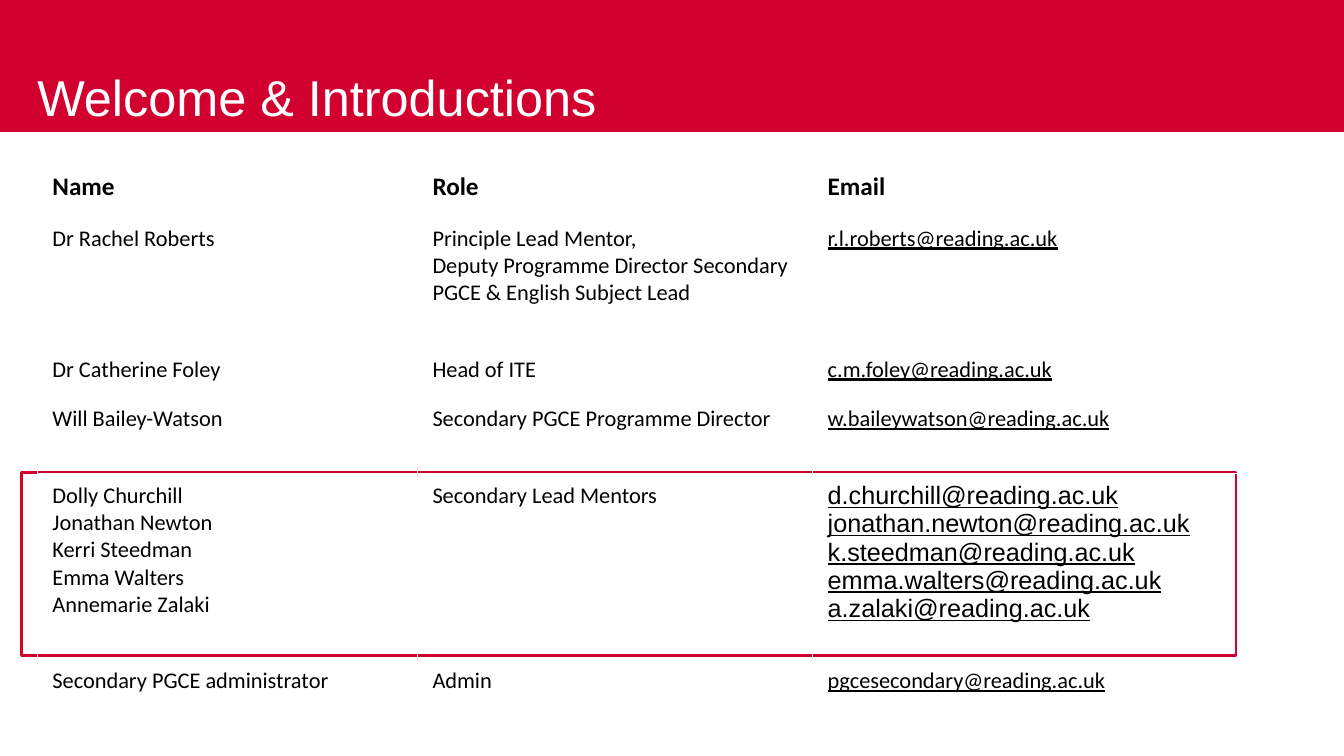
from dataclasses import dataclass

from lxml.etree import SubElement
from pptx import Presentation
from pptx.dml.color import RGBColor
from pptx.enum.shapes import MSO_SHAPE
from pptx.enum.text import MSO_ANCHOR, MSO_AUTO_SIZE, PP_ALIGN
from pptx.oxml.ns import qn
from pptx.util import Emu, Pt


@dataclass(frozen=True)
class Theme:
    red: str = "D2002E"
    white: str = "FFFFFF"
    black: str = "000000"
    heading_font: str = "Arial"
    body_font: str = "Calibri"
    title_size: int = 36
    large_size: int = 18
    body_size: int = 16
    frame_width: float = 2
    grid_width: float = 0.75


@dataclass(frozen=True)
class Panel:
    x: int
    y: int
    w: int
    h: int
    fill: str
    line: str = ""


@dataclass(frozen=True)
class Style:
    font: str
    size: int
    bold: bool = False


@dataclass(frozen=True)
class Contact:
    height: int
    names: tuple[str, ...]
    roles: tuple[str, ...]
    emails: tuple[str, ...]
    text_style: Style
    email_style: Style


THEME = Theme()
PX = 9144  # EMU in one px, 100 px to the inch
SLIDE_W, SLIDE_H = 1333, 750
BAND_H = 131
COLUMNS = (377, 392, 528)
TABLE_X, TABLE_Y = 37, 162
CELL_PAD_X, CELL_PAD_Y = 15, 8

HEADER = Style(THEME.body_font, THEME.large_size, True)
BODY = Style(THEME.body_font, THEME.body_size)
LARGE = Style(THEME.heading_font, THEME.large_size)

PANELS = (
    Panel(0, 0, SLIDE_W, SLIDE_H, THEME.red),
    Panel(0, BAND_H, SLIDE_W, SLIDE_H - BAND_H, THEME.white),
    Panel(21, 469, 1205, 181, THEME.white, THEME.red),
)

CONTACTS = (
    Contact(53, ("Name",), ("Role",), ("Email",), HEADER, HEADER),
    Contact(130, ("Dr Rachel Roberts",),
            ("Principle Lead Mentor,",
             "Deputy Programme Director Secondary PGCE & English Subject Lead"),
            ("r.l.roberts@reading.ac.uk",), BODY, BODY),
    Contact(49, ("Dr Catherine Foley",), ("Head of ITE",),
            ("c.m.foley@reading.ac.uk",), BODY, BODY),
    Contact(76, ("Will Bailey-Watson",), ("Secondary PGCE Programme Director",),
            ("w.baileywatson@reading.ac.uk",), BODY, BODY),
    Contact(184,
            ("Dolly Churchill", "Jonathan Newton", "Kerri Steedman",
             "Emma Walters", "Annemarie Zalaki"),
            ("Secondary Lead Mentors",),
            ("d.churchill@reading.ac.uk", "jonathan.newton@reading.ac.uk",
             "k.steedman@reading.ac.uk", "emma.walters@reading.ac.uk",
             "a.zalaki@reading.ac.uk"), BODY, LARGE),
    Contact(76, ("Secondary PGCE administrator",), ("Admin",),
            ("pgcesecondary@reading.ac.uk",), BODY, BODY),
)


def px(n: int) -> Emu:
    return Emu(n * PX)


def add_run(p, text: str, style: Style, color: str) -> None:
    r = p.add_run()
    r.text = text
    r.font.name, r.font.size, r.font.bold = style.font, Pt(style.size), style.bold
    r.font.underline = "@" in text
    r.font.color.rgb = RGBColor.from_string(color)


def add_panel(s, panel: Panel) -> None:
    sp = s.shapes.add_shape(MSO_SHAPE.RECTANGLE, px(panel.x), px(panel.y),
                            px(panel.w), px(panel.h))
    sp.shadow.inherit = False
    sp.fill.solid()
    sp.fill.fore_color.rgb = RGBColor.from_string(panel.fill)
    if panel.line:
        sp.line.color.rgb = RGBColor.from_string(panel.line)
        sp.line.width = Pt(THEME.frame_width)
    else:
        sp.line.fill.background()


def set_title(s, text: str) -> None:
    sp = s.shapes.title
    sp.left, sp.top, sp.width, sp.height = px(37), px(21), px(1249), px(104)
    tf = sp.text_frame
    tf.margin_left = tf.margin_right = tf.margin_top = tf.margin_bottom = 0
    tf.vertical_anchor = MSO_ANCHOR.BOTTOM
    tf.auto_size = MSO_AUTO_SIZE.NONE
    p = tf.paragraphs[0]
    p.alignment = PP_ALIGN.LEFT
    p.line_spacing = 0.8
    add_run(p, text, Style(THEME.heading_font, THEME.title_size), THEME.white)


def set_borders(cell) -> None:
    props = cell._tc.get_or_add_tcPr()
    for i, side in enumerate(("a:lnL", "a:lnR", "a:lnT", "a:lnB")):
        ln = SubElement(props, qn(side), w=str(Pt(THEME.grid_width)))
        fill = SubElement(ln, qn("a:solidFill"))
        SubElement(fill, qn("a:srgbClr"), val=THEME.white)
        props.insert(i, ln)  # borders come before the cell fill


def fill_cell(cell, lines: tuple[str, ...], style: Style) -> None:
    cell.fill.background()
    set_borders(cell)
    cell.margin_left = cell.margin_right = px(CELL_PAD_X)
    cell.margin_top = cell.margin_bottom = px(CELL_PAD_Y)
    tf = cell.text_frame
    for i, line in enumerate(lines):
        p = tf.add_paragraph() if i else tf.paragraphs[0]
        add_run(p, line, style, THEME.black)


def add_contacts(s, contacts: tuple[Contact, ...]) -> None:
    height = sum(c.height for c in contacts)
    table = s.shapes.add_table(len(contacts), len(COLUMNS), px(TABLE_X), px(TABLE_Y),
                               px(sum(COLUMNS)), px(height)).table
    table.first_row = table.horz_banding = False
    for column, width in zip(table.columns, COLUMNS):
        column.width = px(width)
    for row, c in zip(table.rows, contacts):
        row.height = px(c.height)
        name, role, email = row.cells
        fill_cell(name, c.names, c.text_style)
        fill_cell(role, c.roles, c.text_style)
        fill_cell(email, c.emails, c.email_style)


def main() -> None:
    prs = Presentation()
    prs.slide_width, prs.slide_height = px(SLIDE_W), px(SLIDE_H)
    s = prs.slides.add_slide(prs.slide_layouts[5])

    # Red band, white page and the frame round the lead mentors
    for panel in PANELS:
        add_panel(s, panel)

    # Title, brought in front of the band
    set_title(s, "Welcome & Introductions")
    s.shapes._spTree.append(s.shapes.title._element)

    # Contact table
    add_contacts(s, CONTACTS)
    prs.save("out.pptx")


if __name__ == "__main__":
    main()
